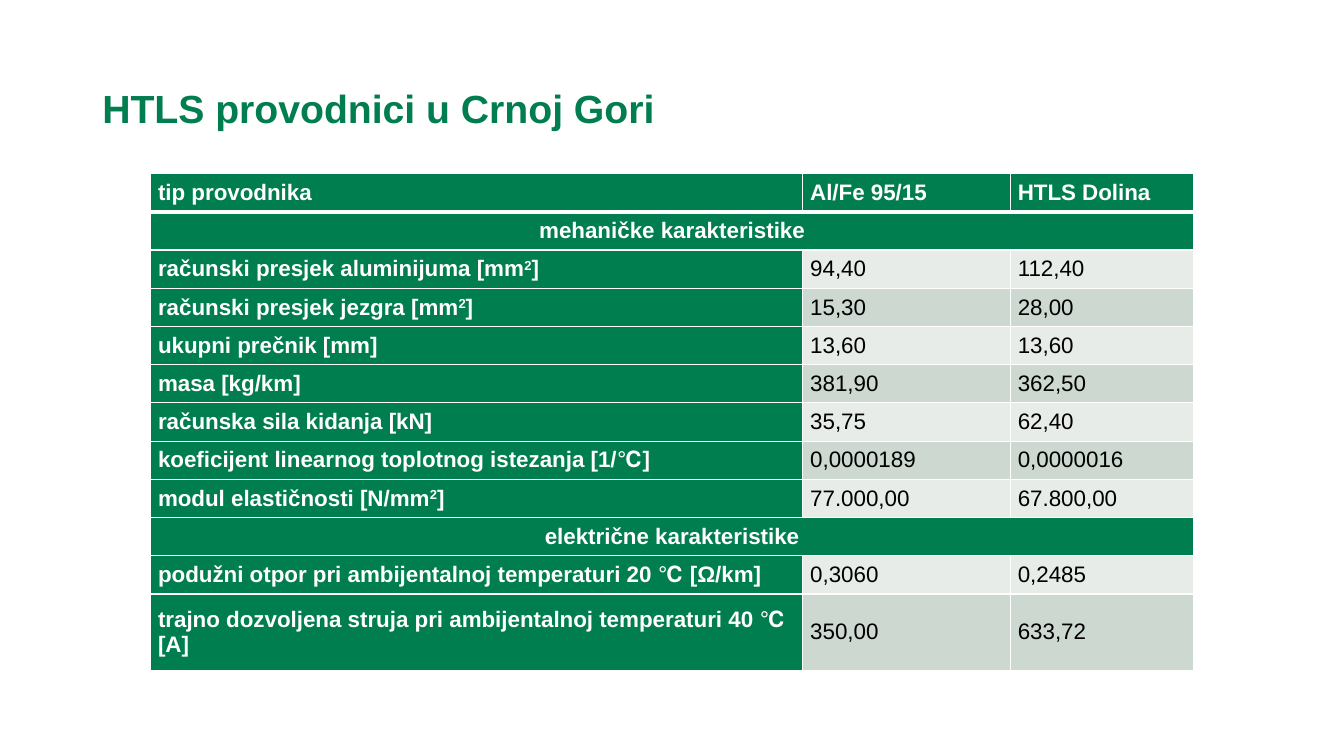
from dataclasses import dataclass

from lxml.etree import SubElement
from pptx import Presentation
from pptx.dml.color import RGBColor
from pptx.enum.text import MSO_ANCHOR, PP_ALIGN
from pptx.oxml.ns import qn
from pptx.slide import Slide
from pptx.table import _Cell
from pptx.text.text import Font, _Paragraph
from pptx.util import Pt

GREEN = "007E4F"
WHITE = "FFFFFF"
BLACK = "000000"
BANDS = ("E7ECE9", "CCD8D0")
COLUMN_WIDTHS = (465.84, 148.32, 131.04)
ROW_HEIGHT = 27.3


@dataclass(frozen=True)
class ConductorRow:
    label: str
    values: tuple[str, ...] = ()
    lines: int = 1


HEADER = ConductorRow("tip provodnika", ("Al/Fe 95/15", "HTLS Dolina"))
ROWS = (
    HEADER,
    ConductorRow("mehaničke karakteristike"),
    ConductorRow("računski presjek aluminijuma [mm²]", ("94,40", "112,40")),
    ConductorRow("računski presjek jezgra [mm²]", ("15,30", "28,00")),
    ConductorRow("ukupni prečnik [mm]", ("13,60", "13,60")),
    ConductorRow("masa [kg/km]", ("381,90", "362,50")),
    ConductorRow("računska sila kidanja [kN]", ("35,75", "62,40")),
    ConductorRow("koeficijent linearnog toplotnog istezanja [1/℃]", ("0,0000189", "0,0000016")),
    ConductorRow("modul elastičnosti [N/mm²]", ("77.000,00", "67.800,00")),
    ConductorRow("električne karakteristike"),
    ConductorRow("podužni otpor pri ambijentalnoj temperaturi 20 ℃ [Ω/km]", ("0,3060", "0,2485")),
    ConductorRow("trajno dozvoljena struja pri ambijentalnoj temperaturi 40 ℃ [A]", ("350,00", "633,72"), 2),
)


def color(value: str) -> RGBColor:
    """Return the colour for a hex string."""
    return RGBColor.from_string(value)


def style_font(font: Font, size: float, font_color: str, bold: bool) -> None:
    """Apply the slide typeface with a size, colour and weight."""
    font.name = "Arial"
    font.size = Pt(size)
    font.bold = bold
    font.color.rgb = color(font_color)


def write_label(paragraph: _Paragraph, text: str, font_color: str, bold: bool) -> None:
    """Write cell text, raising the exponent of square units."""
    base, exponent, ending = text.partition("²")
    paragraph.text = base
    if exponent:
        raised = paragraph.add_run()
        raised.text = "2"
        raised._r.get_or_add_rPr().set("baseline", "30000")
        paragraph.add_run().text = ending
    for run in paragraph.runs:
        style_font(run.font, 16, font_color, bold)


def set_borders(cell: _Cell, top: float, bottom: float) -> None:
    """Draw white borders around a cell."""
    properties = cell._tc.get_or_add_tcPr()
    for side, width in (("L", 1), ("R", 1), ("T", top), ("B", bottom)):
        line = SubElement(properties, qn(f"a:ln{side}"), w=str(Pt(width)))
        fill = SubElement(line, qn("a:solidFill"))
        SubElement(fill, qn("a:srgbClr"), val=WHITE)


def style_cell(cell: _Cell, fill_color: str, row_index: int) -> None:
    """Set the margins, borders and fill of a cell."""
    cell.margin_left = cell.margin_right = Pt(5.4)
    cell.margin_top = cell.margin_bottom = Pt(0)
    cell.vertical_anchor = MSO_ANCHOR.MIDDLE
    set_borders(cell, 3 if row_index == 1 else 1, 3 if row_index == 0 else 1)
    cell.fill.solid()
    cell.fill.fore_color.rgb = color(fill_color)


def add_title(slide: Slide, text: str) -> None:
    """Add the slide title."""
    shape = slide.shapes.add_textbox(Pt(66), Pt(49.7), Pt(828), Pt(59))
    text_frame = shape.text_frame
    text_frame.word_wrap = True
    text_frame.vertical_anchor = MSO_ANCHOR.MIDDLE
    text_frame.text = text
    paragraph = text_frame.paragraphs[0]
    paragraph.line_spacing = 0.9
    style_font(paragraph.runs[0].font, 28, GREEN, True)


def add_conductor_table(slide: Slide) -> None:
    """Add the table that compares the two conductors."""
    height = ROW_HEIGHT * sum(row.lines for row in ROWS)
    shape = slide.shapes.add_table(
        len(ROWS), len(COLUMN_WIDTHS), Pt(107.5), Pt(124), Pt(sum(COLUMN_WIDTHS)), Pt(height)
    )
    table = shape.table
    table.horz_banding = False
    for column, width in zip(table.columns, COLUMN_WIDTHS):
        column.width = Pt(width)
    for row_index, row in enumerate(ROWS):
        table.rows[row_index].height = Pt(ROW_HEIGHT * row.lines)
        for column_index in range(len(COLUMN_WIDTHS)):
            is_heading = row is HEADER or not row.values or column_index == 0
            fill_color = GREEN if is_heading else BANDS[row_index % 2]
            style_cell(table.cell(row_index, column_index), fill_color, row_index)
        for column_index, text in enumerate((row.label, *row.values)):
            is_heading = row is HEADER or column_index == 0
            paragraph = table.cell(row_index, column_index).text_frame.paragraphs[0]
            write_label(paragraph, text, WHITE if is_heading else BLACK, is_heading)
        if not row.values:
            section = table.cell(row_index, 0)
            section.merge(table.cell(row_index, len(COLUMN_WIDTHS) - 1))
            section.text_frame.paragraphs[0].alignment = PP_ALIGN.CENTER


def main() -> None:
    """Build and save the presentation."""
    presentation = Presentation()
    presentation.slide_width = Pt(960)
    presentation.slide_height = Pt(540)
    slide = presentation.slides.add_slide(presentation.slide_layouts[6])
    add_title(slide, "HTLS provodnici u Crnoj Gori")
    add_conductor_table(slide)
    presentation.save("out.pptx")


if __name__ == "__main__":
    main()
